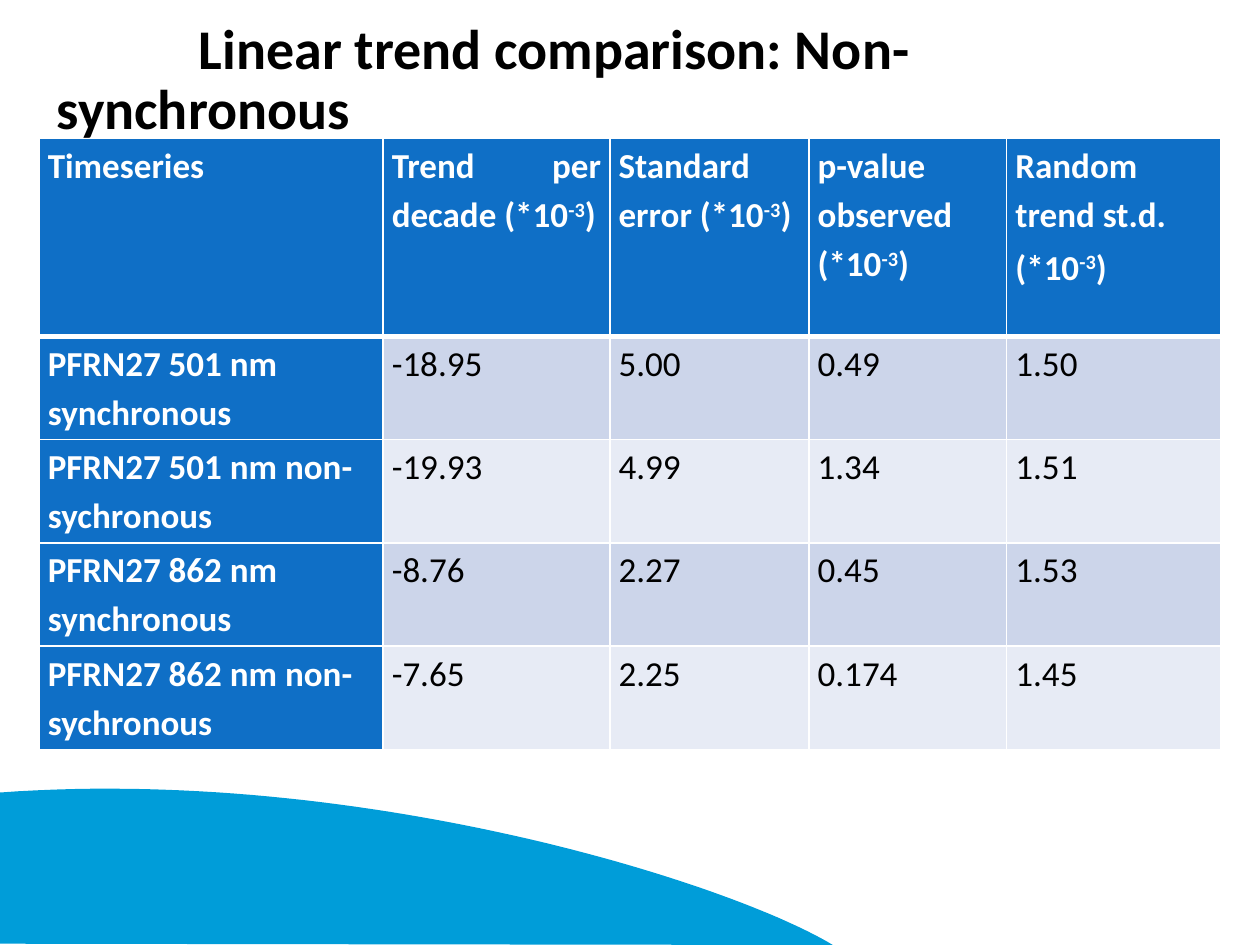
from lxml import etree
from pptx import Presentation
from pptx.dml.color import RGBColor
from pptx.enum import text
from pptx.oxml import ns
from pptx.util import Inches, Pt


def paint(fill, color):
    fill.solid()
    fill.fore_color.rgb = RGBColor.from_string(color)


def write(para, words, size, color, bold):
    run = para.add_run()
    run.text = words
    run.font.name = "Calibri"
    run.font.size = Pt(size)
    run.font.bold = bold
    paint(run.font.fill, color)
    return run


deck = Presentation()
deck.slide_width, deck.slide_height = Inches(10), Inches(7.5)
slide = deck.slides.add_slide(deck.slide_layouts[6])

curve = [(0, 6.29), (2.88, 6.08), (5.8, 7.01), (6.61, 7.5)]
steps = 60
dots = []
for step in range(steps + 1):
    t = step / steps
    parts = ((1 - t) ** 3, 3 * t * (1 - t) ** 2, 3 * t * t * (1 - t), t ** 3)
    dots.append([Inches(sum(p * c[axis] for p, c in zip(parts, curve))) for axis in (0, 1)])
draft = slide.shapes.build_freeform(*dots[0], scale=1)
draft.add_line_segments(dots[1:] + [(0, Inches(7.49))], close=True)
wave = draft.convert_to_shape()
wave.shadow.inherit = False
paint(wave.fill, "009DD9")
wave.line.fill.background()

title = slide.shapes.add_textbox(Inches(0.35), Inches(0.3), Inches(9.29), Inches(0.69))
frame = title.text_frame
frame.word_wrap = True
frame.vertical_anchor = text.MSO_ANCHOR.MIDDLE
frame.margin_right = Inches(0.2)
para = frame.paragraphs[0]
para.line_spacing = 0.9
para._p.get_or_add_pPr().set("indent", str(Inches(1.13)))
write(para, "Linear trend comparison: Non-synchronous", 32, "000000", True)

unit = "(*10^-3^)"
rows = [
    ["Timeseries", f"Trend per decade {unit}", f"Standard error {unit}",
     f"p-value observed {unit}", f"Random trend st.d.\n{unit}"],
    ["PFRN27 501 nm synchronous", "-18.95", "5.00", "0.49", "1.50"],
    ["PFRN27 501 nm non-sychronous", "-19.93", "4.99", "1.34", "1.51"],
    ["PFRN27 862 nm synchronous", "-8.76", "2.27", "0.45", "1.53"],
    ["PFRN27 862 nm non-sychronous", "-7.65", "2.25", "0.174", "1.45"],
]
wides = [2.73, 1.8, 1.58, 1.57, 1.7]
highs = [1.57] + [0.82] * 4
holder = slide.shapes.add_table(5, 5, Inches(0.31), Inches(1.1), Inches(9.38), Inches(4.85))
table = holder.table
for col, wide in zip(table.columns, wides):
    col.width = Inches(wide)
for row, high in zip(table.rows, highs):
    row.height = Inches(high)

for r, row in enumerate(rows):
    for c, words in enumerate(row):
        cell = table.cell(r, c)
        cell.margin_left = cell.margin_right = Inches(0.07)
        cell.margin_top = cell.margin_bottom = 0
        head = r == 0 or c == 0
        props = cell._tc.get_or_add_tcPr()
        for side in "LRTB":
            thick = (r, side) in [(0, "B"), (1, "T")]
            line = etree.SubElement(props, ns.qn(f"a:ln{side}"), w=str(Pt(3 if thick else 1)))
            solid = etree.SubElement(line, ns.qn("a:solidFill"))
            etree.SubElement(solid, ns.qn("a:srgbClr"), val="FFFFFF")
        paint(cell.fill, "0F6FC6" if head else "CCD5EA" if r % 2 else "E7EBF5")
        for i, part in enumerate(words.split("\n")):
            frame = cell.text_frame
            para = frame.add_paragraph() if i else frame.paragraphs[0]
            para.line_spacing = 1.15
            para.space_after = Pt(2)
            if r == 0 or c:
                para.alignment = text.PP_ALIGN.JUSTIFY
            for k, piece in enumerate(part.split("^")):
                run = write(para, piece, 20, "FFFFFF" if head else "000000", head)
                if k == 1:
                    run.font._rPr.set("baseline", "30000")

deck.save("out.pptx")
